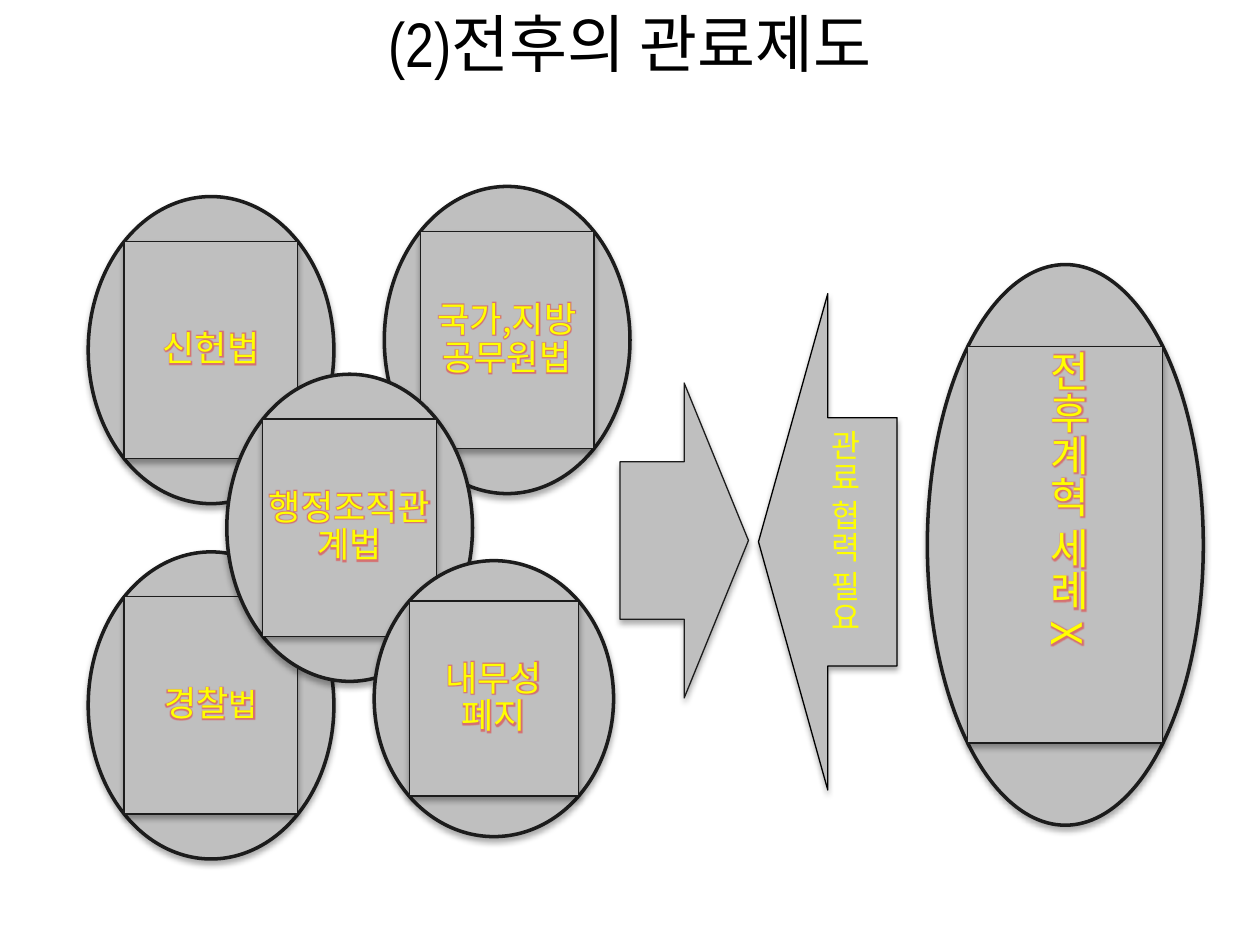
from lxml.etree import SubElement as Sub
from pptx import Presentation
from pptx.dml.color import RGBColor
from pptx.enum.shapes import MSO_SHAPE as Form
from pptx.enum.text import MSO_ANCHOR as Anchor, PP_ALIGN as Align
from pptx.oxml.ns import qn
from pptx.util import Inches, Pt

WIDE, HIGH = Inches(10), Inches(7.5)
GREY = RGBColor(0xBF, 0xBF, 0xBF)
DARK = RGBColor(0x1C, 0x1C, 0x1C)
BLACK = RGBColor(0, 0, 0)
YELLOW = RGBColor(0xFF, 0xFF, 0)
RED = RGBColor(0xFF, 0, 0)
GLOW = RGBColor(0xE6, 0x3C, 0x3C)
SANS = "Noto Sans CJK KR"
INSET = (1 - 0.5 ** 0.5) / 2

LAWS = [
    (7, 20.8, 19.5, 32.5, [("신헌법", 20, SANS)]),
    (30.5, 19.73, 19.5, 32.5, [("국가,지방 공무원법", 20, SANS)]),
    (7, 58.4, 19.5, 32.5, [("경찰", 20, SANS), ("법", 18, "Roboto")]),
    (18, 39.6, 19.5, 32.5, [("행정조직관계법", 20, SANS)]),
    (29.7, 59.33, 19, 29.2, [("내무성 폐지", 20, SANS)]),
]
REFORM = (73.6, 28, 21.9, 59.33, [("전후계혁 세례 X", 24, SANS)])


def place(x, y, w, h):
    return [round(part * size / 100) for part, size in zip((x, y, w, h), (WIDE, HIGH) * 2)]


def tint(node, color, alpha=None):
    shade = Sub(node, qn("a:srgbClr"), val=str(color))
    if alpha:
        Sub(shade, qn("a:alpha"), val=str(alpha * 1000))


def write(shape, runs, color=YELLOW, edge=None, glow=None, tight=False, down=False):
    frame = shape.text_frame
    frame.word_wrap = True
    frame.vertical_anchor = Anchor.MIDDLE
    if down:
        frame._txBody.bodyPr.set("vert", "eaVert")
    para = frame.paragraphs[0]
    para.alignment = Align.CENTER
    if tight:
        frame.margin_left = frame.margin_right = Inches(0.03)
        frame.margin_top = frame.margin_bottom = Inches(0.03)
        para.line_spacing = 0.9
        para.space_after = Pt(runs[0][1] * 0.35)
    for text, size, face in runs:
        run = para.add_run()
        run.text = text
        font = run.font
        font.size = Pt(size)
        props = run._r.get_or_add_rPr()
        if edge is not None:
            line = Sub(props, qn("a:ln"), w=str(Pt(0.75)))
            tint(Sub(line, qn("a:solidFill")), edge)
        font.color.rgb = color
        if glow is not None:
            halo = Sub(Sub(props, qn("a:effectLst")), qn("a:glow"), rad=str(Pt(3)))
            tint(halo, glow, 60)
        font.name = face
        Sub(props, qn("a:ea"), typeface=face)


def draw(home, form, x, y, w, h, line=DARK, width=0.75):
    shape = home.add_shape(form, *place(x, y, w, h))
    shape.fill.solid()
    shape.fill.fore_color.rgb = GREY
    shape.line.color.rgb = line
    shape.line.width = Pt(width)
    shape.shadow.inherit = False
    effects = shape._element.spPr.find(qn("a:effectLst"))
    shade = Sub(effects, qn("a:outerShdw"), blurRad=str(Pt(3.5)), dist=str(Pt(2.2)),
                dir="5400000", rotWithShape="0")
    tint(shade, BLACK, 32)
    return shape


def oval(shapes, x, y, w, h, runs, edge=None, down=False):
    group = shapes.add_group_shape().shapes
    draw(group, Form.OVAL, x, y, w, h, width=2)
    part = 1 - 2 * INSET
    inner = draw(group, Form.RECTANGLE, x + w * INSET, y + h * INSET, w * part, h * part)
    write(inner, runs, edge=edge, glow=GLOW, tight=True, down=down)


def head(title):
    title.left, title.top, title.width, title.height = place(0, 0, 100, 8.93)
    write(title, [("(2)전후의 관료제도", 36, "Arial Narrow")], color=BLACK)


def main():
    deck = Presentation()
    deck.slide_width, deck.slide_height = WIDE, HIGH
    slide = deck.slides.add_slide(deck.slide_layouts[5])
    shapes = slide.shapes
    head(shapes.title)
    for law in LAWS:
        oval(shapes, *law, edge=YELLOW)
    oval(shapes, *REFORM, down=True)
    draw(shapes, Form.RIGHT_ARROW, 49.2, 40.53, 10.2, 33.33)
    need = draw(shapes, Form.LEFT_ARROW, 60.2, 31.07, 11, 52.53, line=BLACK)
    write(need, [("관료 협력 필요", 18, SANS)], edge=RED, down=True)
    deck.save("out.pptx")


if __name__ == "__main__":
    main()
